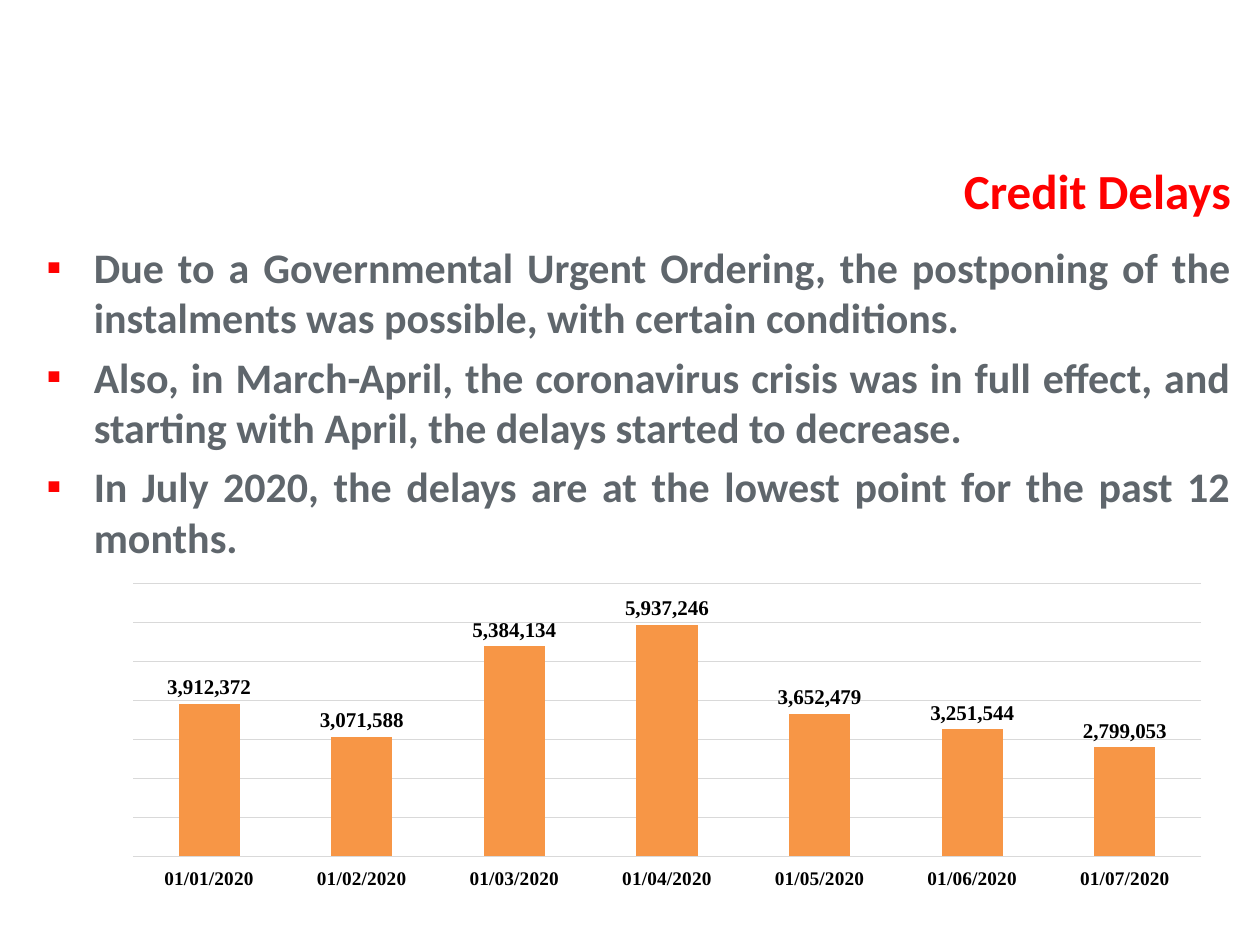
from lxml.etree import SubElement
from pptx import Presentation
from pptx.chart.data import CategoryChartData
from pptx.dml.color import RGBColor
from pptx.enum.chart import XL_CHART_TYPE, XL_LABEL_POSITION, XL_TICK_LABEL_POSITION, XL_TICK_MARK
from pptx.enum.text import MSO_ANCHOR, PP_ALIGN
from pptx.oxml import parse_xml
from pptx.oxml.ns import nsdecls, qn
from pptx.util import Pt

TITLE = "Credit Delays"
POINTS = [
    "Due to a Governmental Urgent Ordering, the postponing of the instalments was possible, with certain conditions. ",
    "Also, in March-April, the coronavirus crisis was in full effect, and starting with April, the delays started to decrease.",
    "In July 2020, the delays are at the lowest point for the past 12 months.",
]
DELAYS = [3912372, 3071588, 5384134, 5937246, 3652479, 3251544, 2799053]
DATES = [f"01/{month:02}/2020" for month in range(1, len(DELAYS) + 1)]
RED, GREY, BLACK, RULE, ORANGE = "FF0000", "5F666C", "000000", "D9D9D9", "F79646"
BODY, SERIF = "Calibri", "Times New Roman"
PLOT = {"x": 0.06, "y": 0.12, "w": 0.93, "h": 0.64}


def color(code):
    return RGBColor.from_string(code)


def style(font, name, size, code, bold=True):
    font.name, font.size, font.bold = name, Pt(size), bold
    font.color.rgb = color(code)


def place(shape, left, top, width, height):
    shape.left, shape.top, shape.width, shape.height = map(Pt, (left, top, width, height))


def write(para, text, size, code, align, gap=0, bullet=None):
    para.alignment = align
    para.space_before = Pt(gap)
    if bullet:
        props = para._p.get_or_add_pPr()
        props.set("marL", str(Pt(27)))
        props.set("indent", str(-Pt(27)))
        tint = SubElement(props, qn("a:buClr"))
        SubElement(tint, qn("a:srgbClr"), val=RED)
        SubElement(props, qn("a:buFont"), typeface=BODY)
        SubElement(props, qn("a:buChar"), char=bullet)
    run = para.add_run()
    run.text = text
    style(run.font, BODY, size, code)


def add_title(slide):
    title = slide.shapes.title
    place(title, 62.5, 88.5, 648, 40.5)
    title.text_frame.vertical_anchor = MSO_ANCHOR.MIDDLE
    write(title.text_frame.paragraphs[0], TITLE, 28, RED, PP_ALIGN.RIGHT)


def add_points(slide):
    box = slide.shapes.add_textbox(Pt(19.5), Pt(134.5), Pt(691), Pt(163.5))
    frame = box.text_frame
    frame.word_wrap = True
    for i, text in enumerate(POINTS):
        para = frame.add_paragraph() if i else frame.paragraphs[0]
        write(para, text, 24, GREY, PP_ALIGN.JUSTIFY, gap=5 if i else 0, bullet="▪")


def fix_plot(chart):
    area = chart._chartSpace.find(".//" + qn("c:plotArea"))
    for old in area.findall(qn("c:layout")):
        area.remove(old)
    parts = '<c:layoutTarget val="inner"/><c:xMode val="edge"/><c:yMode val="edge"/>'
    parts += "".join(f'<c:{key} val="{val}"/>' for key, val in PLOT.items())
    area.insert(0, parse_xml(
        f'<c:layout {nsdecls("c")}><c:manualLayout>{parts}</c:manualLayout></c:layout>'))


def add_bars(slide):
    data = CategoryChartData(number_format="#,##0")
    data.categories = DATES
    data.add_series("Series 1", DELAYS)
    frame = slide.shapes.add_chart(
        XL_CHART_TYPE.COLUMN_CLUSTERED, Pt(36.5), Pt(304), Pt(656.5), Pt(244), data)
    chart = frame.chart
    chart.has_legend = chart.has_title = False
    style(chart.font, SERIF, 11, BLACK, bold=False)
    fix_plot(chart)

    dates, scale = chart.category_axis, chart.value_axis
    dates.major_tick_mark = dates.minor_tick_mark = XL_TICK_MARK.NONE
    dates.tick_label_position = XL_TICK_LABEL_POSITION.LOW
    style(dates.tick_labels.font, SERIF, 11, BLACK)
    scale.minimum_scale, scale.maximum_scale, scale.major_unit = 0, 7000000, 1000000
    scale.has_major_gridlines = True
    scale.visible = False
    for line in (dates.format.line, scale.major_gridlines.format.line):
        line.color.rgb = color(RULE)
        line.width = Pt(0.75)

    plot = chart.plots[0]
    plot.gap_width = 150
    plot.vary_by_categories = False
    bars = plot.series[0]
    bars.format.fill.solid()
    bars.format.fill.fore_color.rgb = color(ORANGE)
    labels = bars.data_labels
    labels.show_value = True
    labels.number_format, labels.number_format_is_linked = "#,##0", False
    labels.position = XL_LABEL_POSITION.OUTSIDE_END
    style(labels.font, SERIF, 12, BLACK)


def main():
    """Build the credit delays slide."""
    deck = Presentation()
    deck.slide_width, deck.slide_height = Pt(720), Pt(540)
    slide = deck.slides.add_slide(deck.slide_layouts[5])
    add_title(slide)
    add_bars(slide)
    add_points(slide)
    deck.save("out.pptx")


if __name__ == "__main__":
    main()
